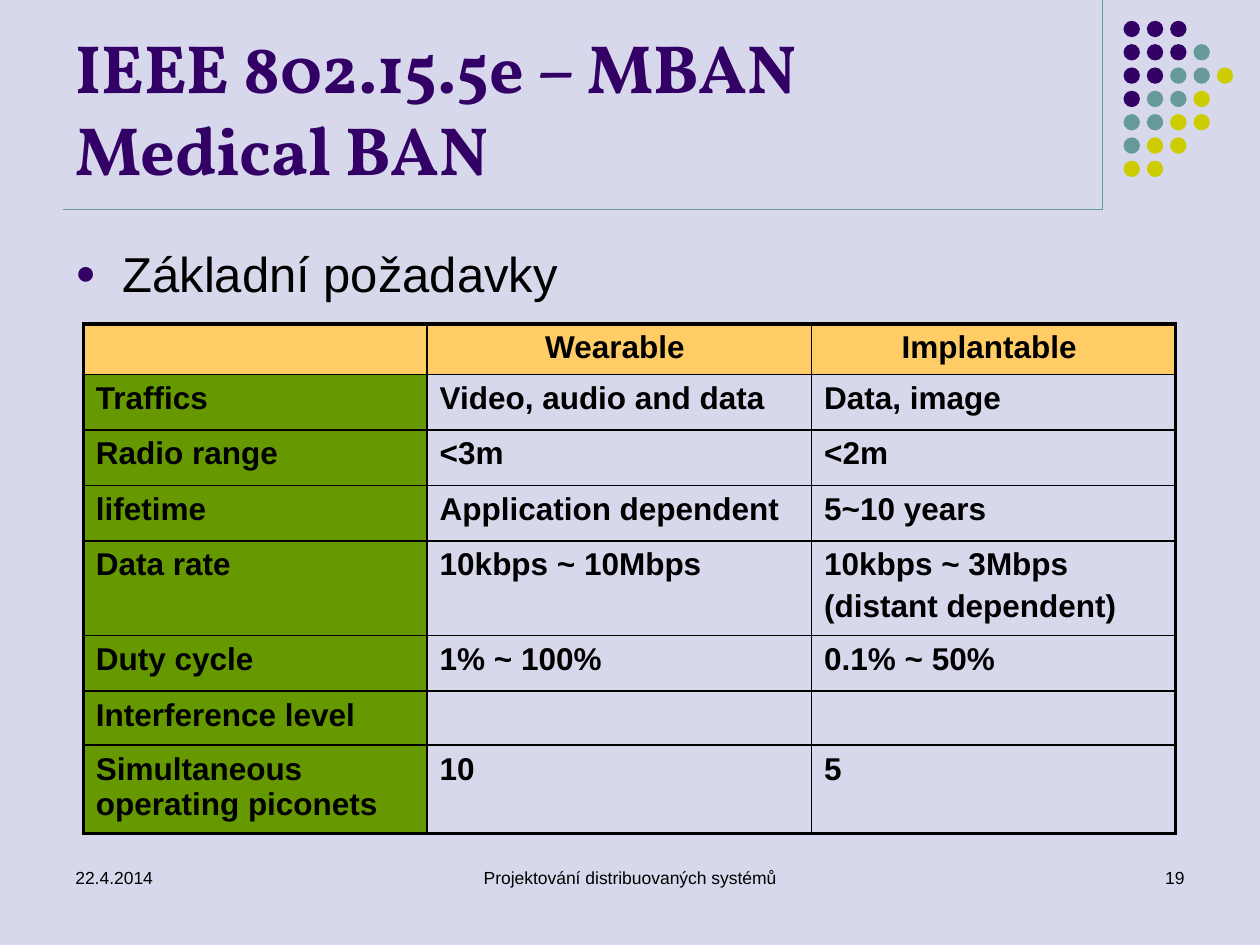
from lxml.etree import SubElement
from pptx import Presentation
from pptx.dml.color import RGBColor
from pptx.enum.shapes import MSO_CONNECTOR, MSO_SHAPE
from pptx.enum.text import MSO_ANCHOR, MSO_AUTO_SIZE, PP_ALIGN
from pptx.oxml.ns import qn
from pptx.util import Cm, Pt

PAPER = RGBColor(0xD8, 0xD8, 0xEC)
PLUM = RGBColor(0x33, 0x00, 0x66)
TEAL = RGBColor(0x66, 0x99, 0x99)
LIME = RGBColor(0xCC, 0xCC, 0x00)
GOLD = RGBColor(0xFF, 0xCC, 0x66)
GREEN = RGBColor(0x66, 0x99, 0x00)
BLACK = RGBColor(0x00, 0x00, 0x00)

DOTS = ["PPP", "PPPT", "PPTTL", "PTTL", "TTLL", "TLL", "LL"]
HUES = {"P": PLUM, "T": TEAL, "L": LIME}

WIDTHS = [6.93, 7.75, 7.34]
HEIGHTS = [0.94, 1.12, 1.12, 1.12, 1.7, 1.12, 1.09, 1.57]
ROWS = [
    ["", "Wearable ", "Implantable "],
    ["Traffics", "Video, audio and data", "Data, image"],
    ["Radio range", "<3m", "<2m"],
    ["lifetime", "Application dependent", "5~10 years"],
    ["Data rate", "10kbps ~ 10Mbps", "10kbps ~ 3Mbps\n(distant dependent)"],
    ["Duty cycle", "1% ~ 100%", "0.1% ~ 50%"],
    ["Interference level", "", ""],
    ["Simultaneous operating piconets", "10", "5"],
]


class Page:
    font = "Arial"
    thin = 1
    thick = 2.25

    def __init__(self, deck):
        self.slide = deck.slides.add_slide(deck.slide_layouts[5])
        self.shapes = self.slide.shapes
        fill = self.slide.background.fill
        fill.solid()
        fill.fore_color.rgb = PAPER

    def style(self, para, size, color=BLACK, bold=False, name=None,
              align=PP_ALIGN.LEFT):
        para.alignment = align
        para.font.size = Pt(size)
        para.font.bold = bold
        para.font.name = name or self.font
        para.font.color.rgb = color

    def title(self, text, left, top, width, height):
        shape = self.shapes.title
        shape.left, shape.top = Cm(left), Cm(top)
        shape.width, shape.height = Cm(width), Cm(height)
        frame = shape.text_frame
        frame.auto_size = MSO_AUTO_SIZE.NONE
        frame.vertical_anchor = MSO_ANCHOR.BOTTOM
        frame.text = text
        self.style(frame.paragraphs[0], 39, PLUM, True, "Vollkorn")

    def text(self, text, left, top, width, height, size, align=PP_ALIGN.LEFT):
        box = self.shapes.add_textbox(Cm(left), Cm(top), Cm(width), Cm(height))
        frame = box.text_frame
        frame.word_wrap = True
        frame.text = text
        para = frame.paragraphs[0]
        self.style(para, size, align=align)
        return para

    def bullet(self, text, left, top, width, height):
        para = self.text(text, left, top, width, height, 28)
        para.space_before = Pt(5.6)
        props = para._p.get_or_add_pPr()
        props.set("marL", str(Cm(0.95)))
        props.set("indent", str(-Cm(0.95)))
        mark = [
            SubElement(props, qn("a:buClr")),
            SubElement(props, qn("a:buSzPct"), val="70000"),
            SubElement(props, qn("a:buFont"), typeface=self.font),
            SubElement(props, qn("a:buChar"), char="●"),
        ]
        SubElement(mark[0], qn("a:srgbClr"), val=str(PLUM))
        font = props.find(qn("a:defRPr"))
        props.remove(font)
        props.append(font)

    def line(self, x1, y1, x2, y2):
        rule = self.shapes.add_connector(
            MSO_CONNECTOR.STRAIGHT, Cm(x1), Cm(y1), Cm(x2), Cm(y2))
        rule.line.color.rgb = TEAL
        rule.line.width = Pt(0.75)
        SubElement(rule._element.spPr, qn("a:effectLst"))

    def dot(self, left, top, size, color):
        shape = self.shapes.add_shape(
            MSO_SHAPE.OVAL, Cm(left), Cm(top), Cm(size), Cm(size))
        shape.shadow.inherit = False
        shape.fill.solid()
        shape.fill.fore_color.rgb = color
        shape.line.fill.background()

    def border(self, cell, sides):
        props = cell._tc.get_or_add_tcPr()
        for side, outer in sides.items():
            width = Pt(self.thick if outer else self.thin)
            edge = SubElement(props, qn("a:ln" + side), w=str(width))
            fill = SubElement(edge, qn("a:solidFill"))
            SubElement(fill, qn("a:srgbClr"), val=str(BLACK))

    def cell(self, cell, text, color, align):
        cell.text = text
        for para in cell.text_frame.paragraphs:
            self.style(para, 18, bold=True, align=align)
            para.space_before = Pt(3.6)
        if color is None:
            cell.fill.background()
        else:
            cell.fill.solid()
            cell.fill.fore_color.rgb = color

    def table(self, rows, left, top, widths, heights):
        grid = self.shapes.add_table(
            len(rows), len(widths), Cm(left), Cm(top),
            Cm(sum(widths)), Cm(sum(heights))).table
        grid.first_row = grid.horz_banding = False
        for col, width in zip(grid.columns, widths):
            col.width = Cm(width)
        for row, height in zip(grid.rows, heights):
            row.height = Cm(height)
        for r, row in enumerate(rows):
            for c, text in enumerate(row):
                cell = grid.cell(r, c)
                self.border(cell, {
                    "L": c == 0, "R": c == len(widths) - 1,
                    "T": r == 0, "B": r == len(rows) - 1})
                color = GOLD if r == 0 else GREEN if c == 0 else None
                align = PP_ALIGN.CENTER if r == 0 else PP_ALIGN.LEFT
                self.cell(cell, text, color, align)


def main():
    deck = Presentation()
    deck.slide_width, deck.slide_height = Cm(25.4), Cm(19.05)
    page = Page(deck)
    page.line(22.23, 0, 22.23, 4.23)
    page.line(1.27, 4.23, 22.23, 4.23)
    for r, row in enumerate(DOTS):
        for c, hue in enumerate(row):
            page.dot(22.65 + 0.47 * c, 0.42 + 0.47 * r, 0.33, HUES[hue])
    page.title("IEEE 802.15.5e – MBAN\vMedical BAN", 1.27, 0.33, 20.96, 3.61)
    page.bullet("Základní požadavky", 1.27, 4.78, 22.86, 1.75)
    page.table(ROWS, 1.68, 6.53, WIDTHS, HEIGHTS)
    page.text("22.4.2014", 1.27, 17.35, 5.92, 1.27, 10)
    page.text("Projektování distribuovaných systémů",
              8.68, 17.35, 8.04, 1.27, 10, PP_ALIGN.CENTER)
    page.text("19", 18.21, 17.35, 5.92, 1.27, 10, PP_ALIGN.RIGHT)
    deck.save("out.pptx")


if __name__ == "__main__":
    main()
